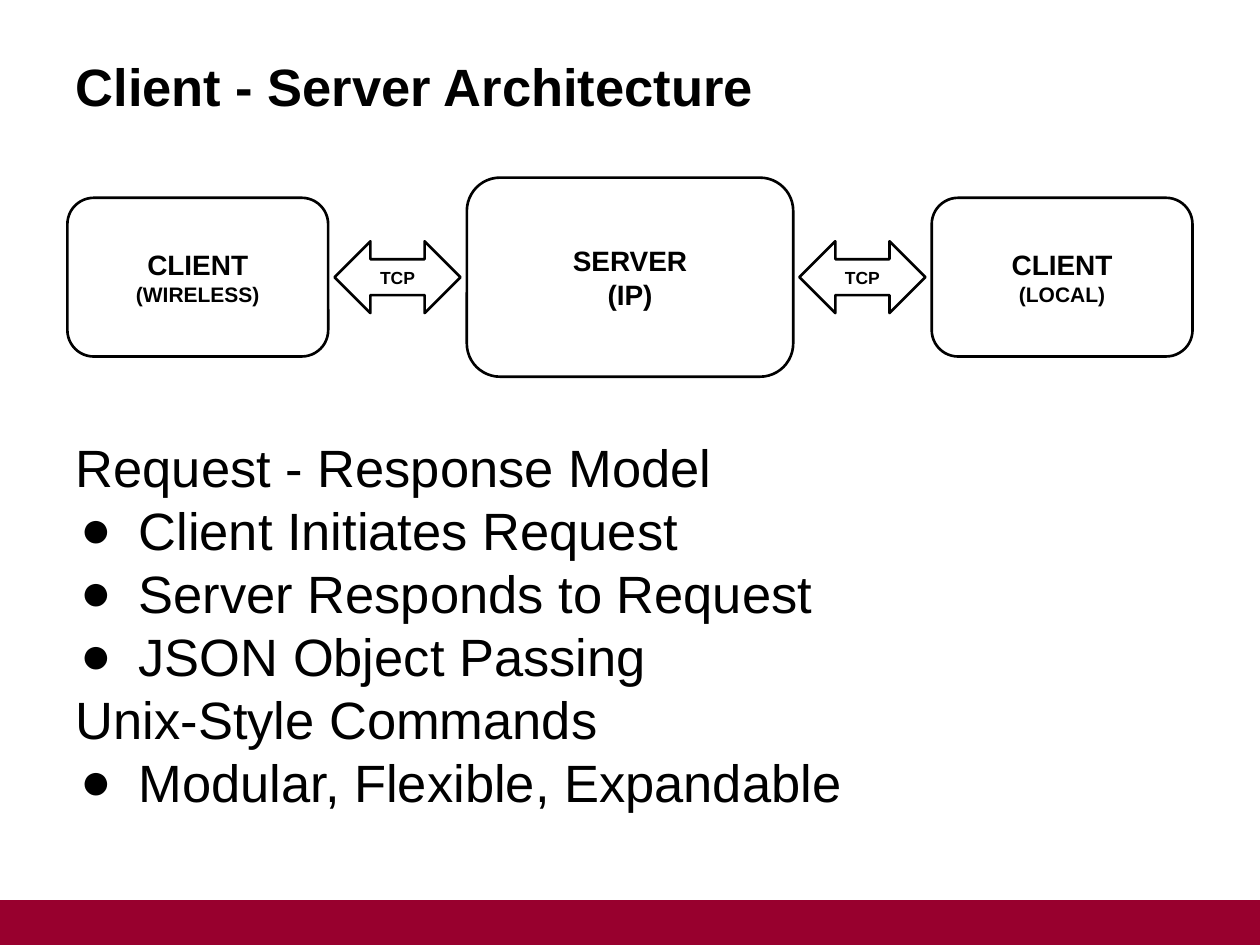
"""Build the client-server architecture slide."""
from lxml import etree
from pptx import Presentation
from pptx.dml.color import RGBColor
from pptx.enum.shapes import MSO_SHAPE
from pptx.enum.text import MSO_ANCHOR, MSO_AUTO_SIZE, PP_ALIGN
from pptx.oxml.ns import qn
from pptx.util import Inches, Pt

BLACK = RGBColor(0x00, 0x00, 0x00)
WHITE = RGBColor(0xFF, 0xFF, 0xFF)
CRIMSON = RGBColor(0x98, 0x00, 0x2E)
BAR, BOX, ARROW = MSO_SHAPE.RECTANGLE, MSO_SHAPE.ROUNDED_RECTANGLE, MSO_SHAPE.LEFT_RIGHT_ARROW
TOP, MIDDLE = MSO_ANCHOR.TOP, MSO_ANCHOR.MIDDLE
LEFT, CENTER = PP_ALIGN.LEFT, PP_ALIGN.CENTER
NO_FIT = MSO_AUTO_SIZE.NONE

SLIDE_WIDTH, SLIDE_HEIGHT = 10, 7.5
BAR_HEIGHT = 0.35
ROW_MIDDLE, ROW_GAP = 2.2, 0.05
HANGING = 0.46

TITLE = "Client - Server Architecture"
TOPICS = [
    ("Request - Response Model",
     ["Client Initiates Request", "Server Responds to Request", "JSON Object Passing"]),
    ("Unix-Style Commands", ["Modular, Flexible, Expandable"]),
]
CLIENT_SIZE, SERVER_SIZE, LINK_SIZE = (2.07, 1.26), (2.59, 1.58), (1, 0.57)
LINK = (ARROW, LINK_SIZE, [("TCP", 10)])
DIAGRAM = [
    (BOX, CLIENT_SIZE, [("CLIENT", 16), ("(WIRELESS)", 12)]),
    LINK,
    (BOX, SERVER_SIZE, [("SERVER", 16), ("(IP)", 16)]),
    LINK,
    (BOX, CLIENT_SIZE, [("CLIENT", 16), ("(LOCAL)", 12)]),
]


def apply(target, values):
    for name, value in values.items():
        setattr(target, name, value)


def place(shape, left, top, width, height):
    apply(shape, {"left": Inches(left), "top": Inches(top),
                  "width": Inches(width), "height": Inches(height)})


def write(shape, lines, anchor, align, bold):
    frame = shape.text_frame
    margins = dict.fromkeys(
        ("margin_left", "margin_top", "margin_right", "margin_bottom"), Inches(0.1))
    apply(frame, {"word_wrap": True, "auto_size": NO_FIT, "vertical_anchor": anchor, **margins})
    frame.text = "\n".join(text for text, size in lines)
    for para, (text, size) in zip(frame.paragraphs, lines):
        para.alignment = align
        for span in para.runs:
            apply(span.font, {"name": "Arial", "size": Pt(size), "bold": bold})
            span.font.color.rgb = BLACK


def set_bullet(para, bulleted):
    properties = para._p.get_or_add_pPr()
    properties.set("marL", str(Inches(0.5 if bulleted else 0)))
    properties.set("indent", str(Inches(-HANGING if bulleted else 0)))
    if bulleted:
        color = etree.SubElement(properties, qn("a:buClr"))
        etree.SubElement(color, qn("a:srgbClr"), val=str(BLACK))
        etree.SubElement(properties, qn("a:buFont"), typeface="Arial")
        etree.SubElement(properties, qn("a:buChar"), char="●")
    else:
        etree.SubElement(properties, qn("a:buNone"))
    apply(para, {"space_before": Pt(0), "line_spacing": Pt(36)})


def add_figure(page, kind, bounds, fill, line):
    figure = page.shapes.add_shape(kind, *(Inches(value) for value in bounds))
    figure.shadow.inherit = False
    figure.fill.solid()
    figure.fill.fore_color.rgb = fill
    figure.line.color.rgb = line
    figure.line.width = Pt(1.5)
    return figure


def add_diagram(page):
    total = sum(size[0] for kind, size, lines in DIAGRAM) + ROW_GAP * (len(DIAGRAM) - 1)
    left = (SLIDE_WIDTH - total) / 2
    for kind, (width, height), lines in DIAGRAM:
        bounds = (left, ROW_MIDDLE - height / 2, width, height)
        figure = add_figure(page, kind, bounds, WHITE, BLACK)
        write(figure, lines, MIDDLE, CENTER, True)
        left += width + ROW_GAP


def add_topics(body):
    rows = []
    for heading, points in TOPICS:
        rows += [(heading, False)] + [(point, True) for point in points]
    place(body, 0.5, 3.35, 9, 3.5)
    write(body, [(text, 30) for text, bulleted in rows], TOP, LEFT, False)
    for para, (text, bulleted) in zip(body.text_frame.paragraphs, rows):
        set_bullet(para, bulleted)


def main():
    deck = Presentation()
    apply(deck, {"slide_width": Inches(SLIDE_WIDTH), "slide_height": Inches(SLIDE_HEIGHT)})
    page = deck.slides.add_slide(deck.slide_layouts[1])
    title, body = page.placeholders
    place(title, 0.5, 0.3, 9, 0.75)
    write(title, [(TITLE, 30)], MIDDLE, LEFT, True)
    add_topics(body)
    bar_bounds = (0, SLIDE_HEIGHT - BAR_HEIGHT, SLIDE_WIDTH, BAR_HEIGHT)
    add_figure(page, BAR, bar_bounds, CRIMSON, CRIMSON)
    add_diagram(page)
    deck.save("out.pptx")


if __name__ == "__main__":
    main()
